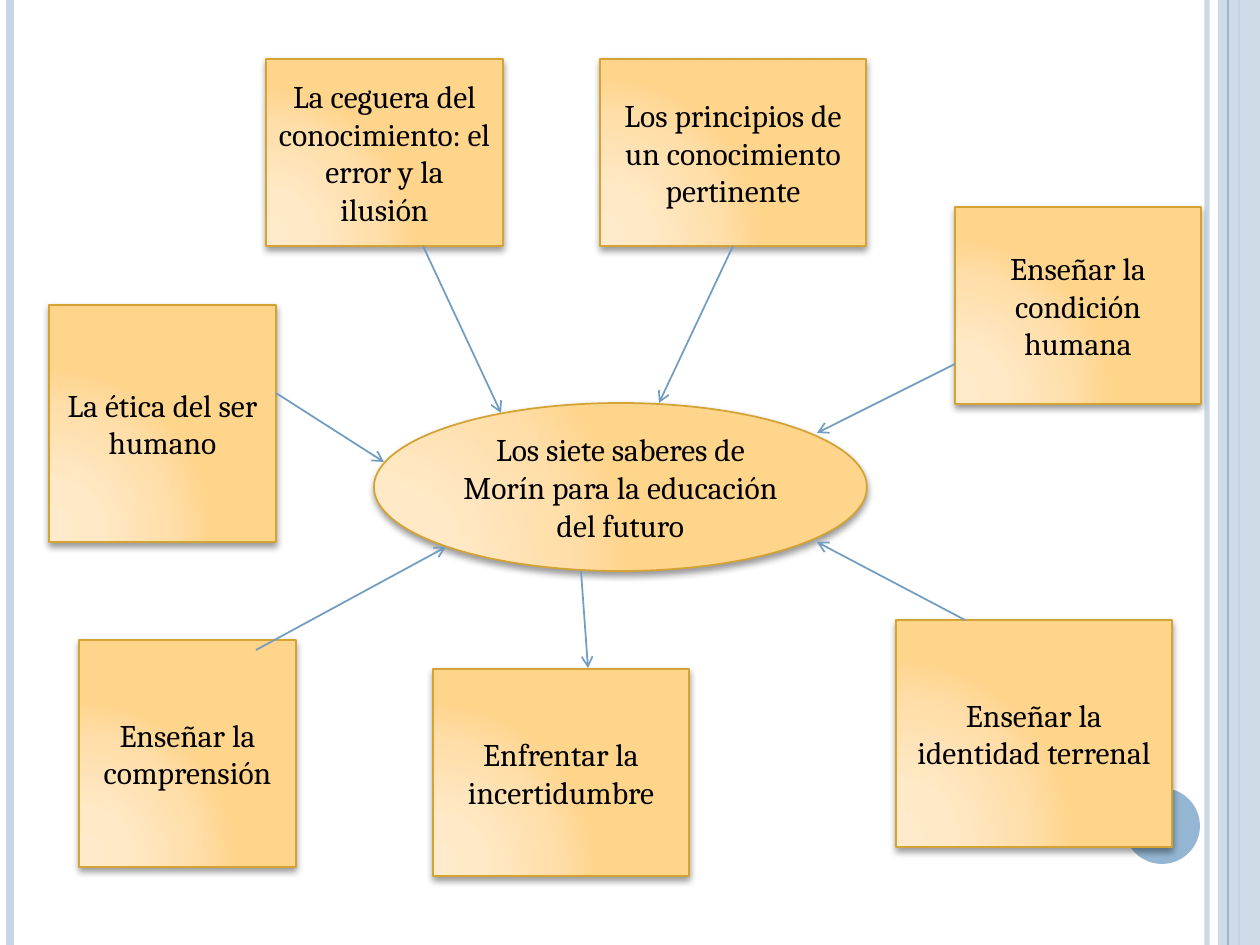
from dataclasses import dataclass

from lxml import etree
from pptx import Presentation
from pptx import util as u
from pptx.dml.color import RGBColor
from pptx.enum import shapes, text
from pptx.oxml import parse_xml
from pptx.oxml.ns import nsdecls, qn

SCALE = u.Inches(1) / 126


@dataclass(frozen=True)
class Theme:
    font: str = "Cambria"
    size: int = 18
    ink: str = "000000"
    border: str = "D4A334"
    arrow: str = "719DC1"
    pale: str = "C8D7E5"
    blue: str = "94B6D2"
    outline: float = 1
    glow: tuple = ((0, "FFEACB"), (30, "FFE9C6"), (75, "FFDEA9"), (100, "FFD48B"))


def px(*lengths):
    return [u.Emu(round(length * SCALE)) for length in lengths]


def set_alpha(fill, percent):
    color = fill._xPr.find(qn("a:solidFill"))[0]
    etree.SubElement(color, qn("a:alpha"), val=str(percent * 1000))


class ConceptMap:
    """Draws the parts of a concept map on one slide in one theme."""

    def __init__(self, slide, theme):
        self.shapes = slide.shapes
        self.theme = theme

    def line(self, start, end, color, width, alpha=100):
        line = self.shapes.add_connector(
            shapes.MSO_CONNECTOR.STRAIGHT, *px(*start, *end))
        line.line.color.rgb = RGBColor.from_string(color)
        line.line.width = u.Pt(width)
        if alpha < 100:
            set_alpha(line.line.fill, alpha)
        etree.SubElement(line._element.spPr, qn("a:effectLst"))
        return line

    def arrow(self, start, end):
        arrow = self.line(start, end, self.theme.arrow, self.theme.outline)
        etree.SubElement(arrow.line._get_or_add_ln(), qn("a:tailEnd"), type="arrow")
        return arrow

    def ornament(self, kind, box, color, alpha=100):
        ornament = self.shapes.add_shape(kind, *px(*box))
        ornament.shadow.inherit = False
        ornament.line.fill.background()
        ornament.fill.solid()
        ornament.fill.fore_color.rgb = RGBColor.from_string(color)
        if alpha < 100:
            set_alpha(ornament.fill, alpha)

    def concept(self, kind, box, label):
        concept = self.shapes.add_shape(kind, *px(*box))
        concept.line.color.rgb = RGBColor.from_string(self.theme.border)
        concept.line.width = u.Pt(self.theme.outline)
        self.add_glow(concept)
        self.add_shadow(concept)
        frame = concept.text_frame
        frame.word_wrap = True
        frame.vertical_anchor = text.MSO_ANCHOR.MIDDLE
        paragraph = frame.paragraphs[0]
        paragraph.alignment = text.PP_ALIGN.CENTER
        run = paragraph.add_run()
        run.text = label
        run.font.name = self.theme.font
        run.font.size = u.Pt(self.theme.size)
        run.font.color.rgb = RGBColor.from_string(self.theme.ink)
        return concept

    def add_glow(self, concept):
        stops = "".join(
            f'<a:gs pos="{position * 1000}"><a:srgbClr val="{color}"/></a:gs>'
            for position, color in self.theme.glow)
        glow = parse_xml(
            f'<a:gradFill {nsdecls("a")} rotWithShape="1"><a:gsLst>{stops}</a:gsLst>'
            '<a:path path="circle"><a:fillToRect l="5000" t="100000" r="120000" b="10000"/>'
            '</a:path></a:gradFill>')
        concept.fill.background()
        properties = concept._element.spPr
        properties.replace(properties.find(qn("a:noFill")), glow)

    def add_shadow(self, concept):
        concept.shadow.inherit = False
        effects = concept._element.spPr.find(qn("a:effectLst"))
        effects.append(parse_xml(
            f'<a:outerShdw {nsdecls("a")} blurRad="{u.Pt(4)}" dist="{u.Pt(2)}"'
            ' dir="5400000" rotWithShape="0">'
            f'<a:srgbClr val="{self.theme.ink}"><a:alpha val="40000"/></a:srgbClr>'
            '</a:outerShdw>'))


def main():
    deck = Presentation()
    deck.slide_width, deck.slide_height = px(1260, 945)
    theme = Theme()
    canvas = ConceptMap(deck.slides.add_slide(deck.slide_layouts[6]), theme)
    rectangle, oval = shapes.MSO_SHAPE.RECTANGLE, shapes.MSO_SHAPE.OVAL

    def stripe(x, color, width, alpha=100):
        canvas.line((x, 0), (x, 945), color, width, alpha)

    stripe(1207, theme.pale, 3, 93)
    stripe(10, theme.pale, 4.5)
    stripe(1239, theme.blue, 1.5)
    canvas.ornament(rectangle, (1218, 0, 42, 945), theme.pale, 87)
    stripe(1228, theme.blue, 0.75)
    canvas.ornament(oval, (1124, 788, 76, 76), theme.blue)

    canvas.concept(rectangle, (266, 59, 237, 187),
                   "La ceguera del conocimiento: el error y la ilusión")
    principles = canvas.concept(rectangle, (600, 59, 266, 187),
                                "Los principios de un conocimiento pertinente")
    for box, label in (
        ((79, 640, 217, 227), "Enseñar la comprensión"),
        ((433, 669, 256, 207), "Enfrentar la incertidumbre"),
        ((896, 620, 276, 227), "Enseñar la identidad terrenal"),
        ((955, 207, 246, 197), "Enseñar la condición humana"),
    ):
        canvas.concept(rectangle, box, label)
    canvas.concept(oval, (374, 403, 493, 168),
                   "Los siete saberes de Morín para la educación del futuro")
    canvas.concept(rectangle, (49, 305, 227, 237), "La ética del ser humano")

    canvas.arrow((423, 246), (501, 413))
    canvas.arrow((733, 246), (659, 403)).begin_connect(principles, 2)
    for start, end in (
        ((955, 364), (817, 433)),
        ((276, 393), (384, 462)),
        ((581, 571), (588, 668)),
        ((965, 620), (817, 542)),
        ((256, 650), (446, 547)),
    ):
        canvas.arrow(start, end)

    deck.save("out.pptx")


if __name__ == "__main__":
    main()
